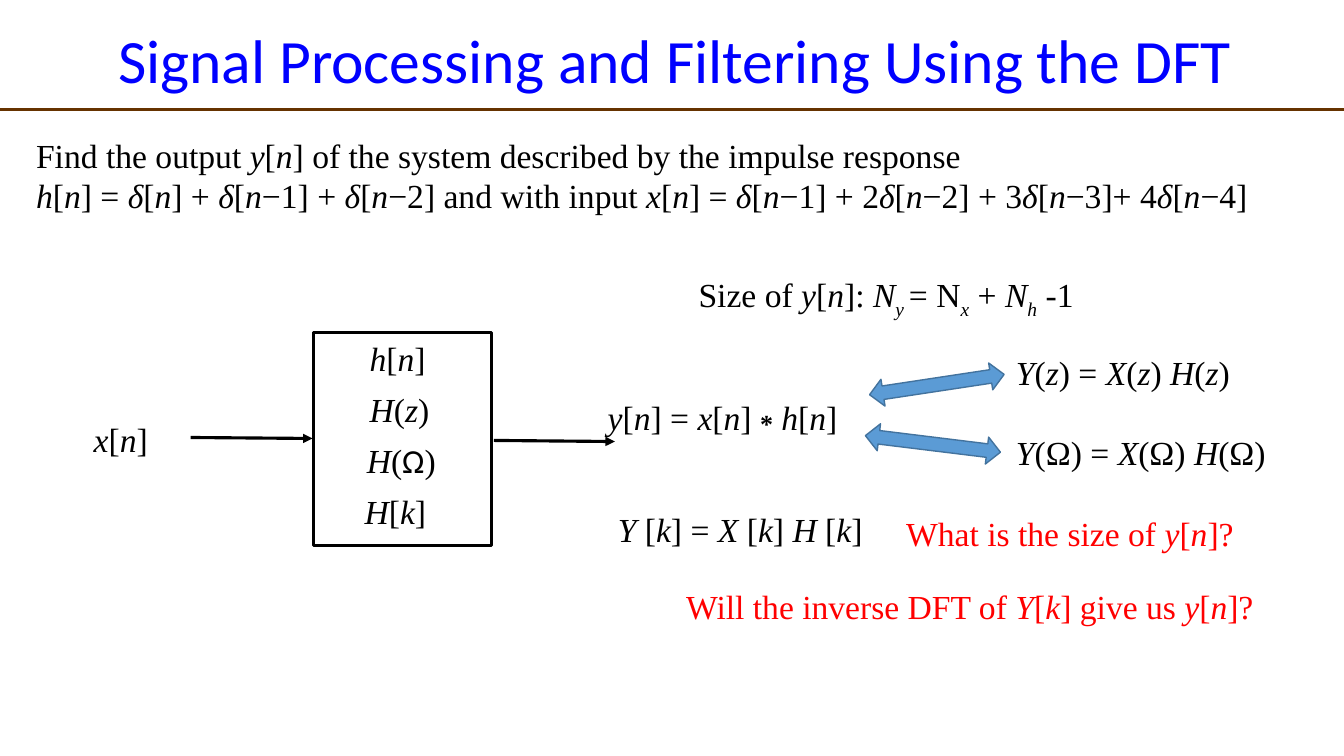
from lxml import etree
from pptx import Presentation
from pptx.dml.color import RGBColor
from pptx.enum.shapes import MSO_CONNECTOR, MSO_SHAPE
from pptx.enum.text import MSO_ANCHOR, MSO_AUTO_SIZE, PP_ALIGN
from pptx.oxml.ns import qn
from pptx.util import Pt

LEFT, CENTER = PP_ALIGN.LEFT, PP_ALIGN.CENTER
MIDDLE = MSO_ANCHOR.MIDDLE
FIT_SHAPE = MSO_AUTO_SIZE.SHAPE_TO_FIT_TEXT
STRAIGHT = MSO_CONNECTOR.STRAIGHT
RECTANGLE, DOUBLE_ARROW = MSO_SHAPE.RECTANGLE, MSO_SHAPE.LEFT_RIGHT_ARROW

BLACK = RGBColor(0x00, 0x00, 0x00)
BLUE = RGBColor(0x00, 0x00, 0xFF)
RED = RGBColor(0xFF, 0x00, 0x00)
BROWN = RGBColor(0x66, 0x33, 0x00)
ARROW_FILL = RGBColor(0x5B, 0x9B, 0xD5)
ARROW_LINE = RGBColor(0x43, 0x73, 0x9E)
SERIF, SANS = "Times New Roman", "Calibri"

prs = Presentation()
prs.slide_width, prs.slide_height = Pt(960), Pt(540)
s = prs.slides.add_slide(prs.slide_layouts[6])


def add_text(x, y, w, h, lines, color=BLACK, align=LEFT, wrap=True, font=SERIF, size=24):
    """Text between bars alternates upright and italic; a leading ↓ is a subscript."""
    tf = s.shapes.add_textbox(Pt(x), Pt(y), Pt(w), Pt(h)).text_frame
    tf.word_wrap = wrap
    tf.auto_size = FIT_SHAPE
    for i, line in enumerate(lines):
        p = tf.add_paragraph() if i else tf.paragraphs[0]
        p.alignment = align
        p.font.name, p.font.size, p.font.color.rgb = font, Pt(size), color
        for j, part in enumerate(line.split("|")):
            if not part:
                continue
            r = p.add_run()
            r.text = part.lstrip("↓")
            r.font.italic = j % 2 == 1
            if part.startswith("↓"):
                r.font._element.set("baseline", "-25000")
            elif part == "*":
                r.font.size, r.font.bold = Pt(32), True
                r.font._element.set("baseline", "-6000")
            elif part == "Ω":
                r.font.name = SANS
    return tf


def add_line(x1, y1, x2, y2, color, arrow=False):
    line = s.shapes.add_connector(STRAIGHT, Pt(x1), Pt(y1), Pt(x2), Pt(y2))
    line.line.color.rgb, line.line.width = color, Pt(2.25)
    if arrow:
        etree.SubElement(line.line._get_or_add_ln(), qn("a:tailEnd"), type="triangle")
    etree.SubElement(line._element.spPr, qn("a:effectLst"))


tf = add_text(25.2, 9.4, 914.4, 72, ["Signal Processing and Filtering Using the DFT"],
              BLUE, CENTER, font=SANS, size=44)
tf.auto_size = MSO_AUTO_SIZE.NONE
tf.vertical_anchor = MIDDLE
tf.paragraphs[0].line_spacing = 0.9
add_line(0, 78.5, 960, 78.5, BROWN)

add_text(18.7, 92.9, 926.6, 65.5, [
    "Find the output |y|[|n|] of the system described by the impulse response",
    "|h|[|n|] = |δ|[|n|] + |δ|[|n|−1] + |δ|[|n|−2] and with input "
    "|x|[|n|] = |δ|[|n|−1] + 2|δ|[|n|−2] + 3|δ|[|n|−3]+ 4|δ|[|n|−4]",
])

box = s.shapes.add_shape(RECTANGLE, Pt(223.9), Pt(237.6), Pt(127.4), Pt(152))
box.shadow.inherit = False
box.fill.background()
box.line.color.rgb, box.line.width = BLACK, Pt(2.25)

system_forms = [
    (257, 61.2, "|h|[|n|]"),
    (257, 64, "|H|(|z|)"),
    (254.9, 70.6, "|H|(||Ω||)"),
    (253.4, 64.8, "|H|[|k|]"),
]
for i, (x, w, text) in enumerate(system_forms):
    add_text(x, 237.6 + 36.5 * i, w, 36, [text], wrap=False)

add_line(136.1, 312.5, 223.2, 313.2, BLACK, arrow=True)
add_line(352.8, 314.6, 439.2, 315.4, BLACK, arrow=True)

equations = [
    (59.8, 295.9, 61.2, "|x|[|n|]"),
    (427, 272.2, 190.1, "|y|[|n|] = |x|[|n|] ||*|| |h|[|n|]"),
    (718.6, 247.7, 175, "|Y|(|z|) = |X|(|z|) |H|(|z|)"),
    (718.6, 305.3, 200.9, "|Y|(Ω) = |X|(Ω) |H|(Ω)"),
    (434.2, 360, 197.3, "|Y |[|k|] = |X |[|k|] |H |[|k|]"),
]
for x, y, w, text in equations:
    add_text(x, y, w, 36, [text], wrap=False)

remarks = [
    (434.2, 192.2, 397.4, BLACK, "Size of |y|[|n|]: |N||↓y |= N|↓x| + |N||↓h| -1"),
    (635, 362.9, 258.5, RED, "What is the size of |y|[|n|]?"),
    (452.2, 414.7, 481, RED, "Will the inverse DFT of |Y|[|k|] give us |y|[|n|]?"),
]
for x, y, w, color, text in remarks:
    add_text(x, y, w, 36, [text], color, CENTER)

for x, y, angle in [(620.6, 265, 351.4), (617.8, 307.4, 7)]:
    arrow = s.shapes.add_shape(DOUBLE_ARROW, Pt(x), Pt(y), Pt(97.2), Pt(19.4))
    arrow.rotation = angle
    arrow.shadow.inherit = False
    arrow.fill.solid()
    arrow.fill.fore_color.rgb = ARROW_FILL
    arrow.line.color.rgb, arrow.line.width = ARROW_LINE, Pt(1)

prs.save("out.pptx")
